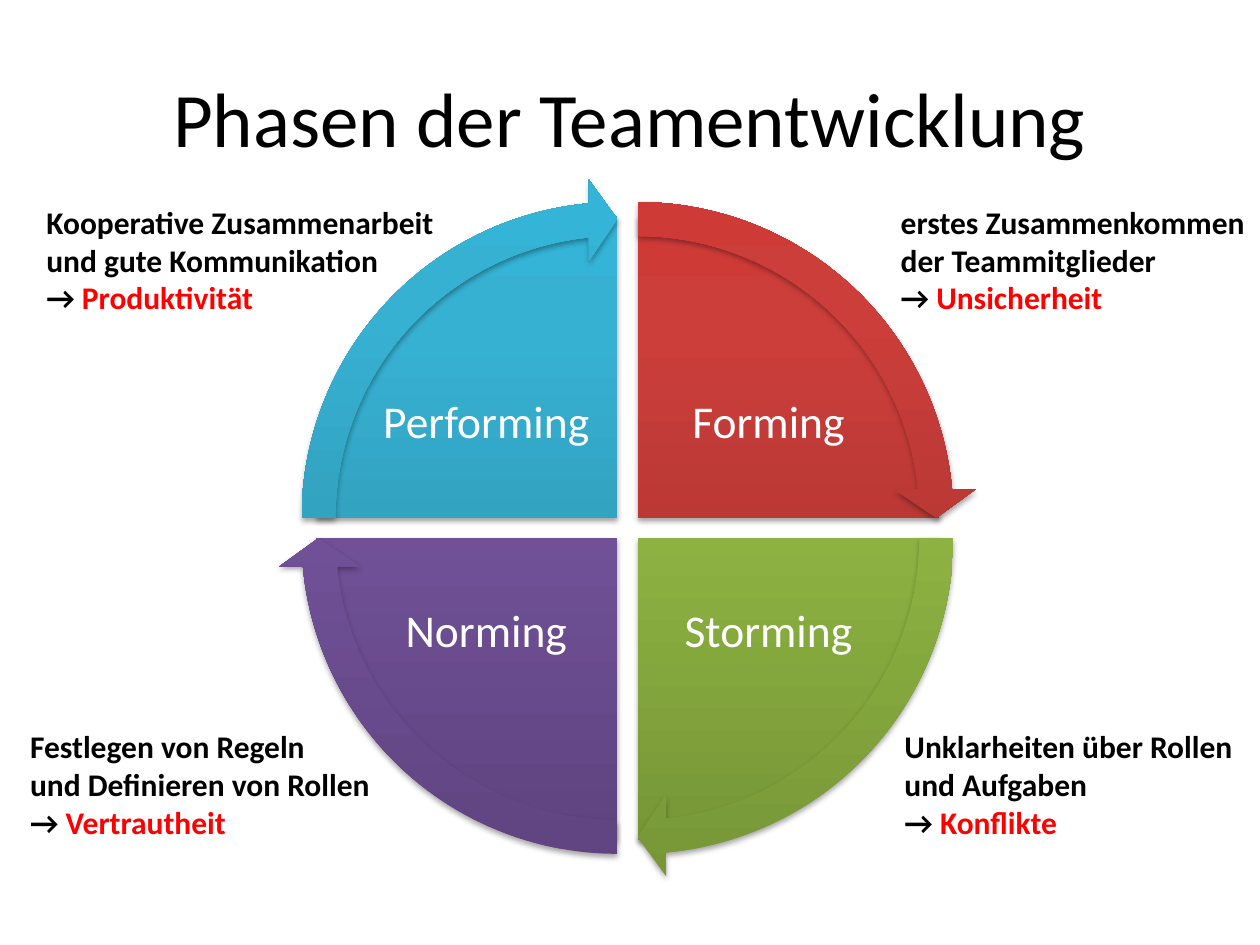
from copy import deepcopy
from dataclasses import dataclass

from lxml.etree import SubElement
from pptx import Presentation
from pptx.dml.color import RGBColor
from pptx.enum.shapes import MSO_SHAPE
from pptx.enum.text import MSO_ANCHOR, MSO_AUTO_SIZE, PP_ALIGN
from pptx.oxml.ns import qn
from pptx.util import Inches, Pt


@dataclass(frozen=True)
class Theme:
    font: str = "Calibri"
    black: str = "000000"
    white: str = "FFFFFF"
    accent: str = "FF0000"
    title_size: int = 44
    label_size: int = 26
    note_size: int = 18


@dataclass(frozen=True)
class Phase:
    name: str
    side: int  # -1 left, 1 right
    level: int  # -1 top, 1 bottom
    start: int  # start angle, 54 units to a quarter turn
    colors: tuple  # gradient from bottom to top
    note: str
    outcome: str
    note_box: tuple


THEME = Theme()
CENTER_X, CENTER_Y = 4.98, 4.19
GAP = 0.08
PIE_SIZE, ARROW_SIZE = 4.79, 5.39
QUARTER = 54
GRADIENT_STOPS = (0, 0.8, 1)

# Clockwise from the top right
PHASES = [
    Phase("Forming", 1, -1, 3 * QUARTER, ("9C2F2D", "CB3E3A", "CE3B37"),
          "erstes Zusammenkommen\vder Teammitglieder", "Unsicherheit",
          (7.05, 1.56, 2.95, 1.01)),
    Phase("Storming", 1, 1, 0, ("779737", "9BC348", "9DC746"),
          "Unklarheiten über Rollen\vund Aufgaben", "Konflikte",
          (7.08, 5.72, 2.82, 1.01)),
    Phase("Norming", -1, 1, QUARTER, ("5F4480", "7B58A6", "7C57A8"),
          "Festlegen von Regeln\vund Definieren von Rollen", "Vertrautheit",
          (0.14, 5.72, 2.92, 1.01)),
    Phase("Performing", -1, -1, 2 * QUARTER, ("2A88A2", "37B1D2", "34B4D6"),
          "Kooperative Zusammenarbeit\vund gute Kommunikation", "Produktivität",
          (0.27, 1.56, 3.3, 1.01)),
]


def set_font(para, size, color, bold=False):
    font = para.font
    font.name, font.size, font.bold = THEME.font, Pt(size), bold
    font.color.rgb = RGBColor.from_string(color)


def add_text_box(page, position, wrap=True):
    box = page.shapes.add_textbox(*map(Inches, position))
    box.text_frame.word_wrap = wrap
    return box.text_frame


def add_centered_text(page, position, text, size, color):
    frame = add_text_box(page, position)
    frame.vertical_anchor = MSO_ANCHOR.MIDDLE
    para = frame.paragraphs[0]
    para.text, para.alignment = text, PP_ALIGN.CENTER
    set_font(para, size, color)
    return frame


def add_label(page, phase):
    width, height = 1.77, 1.31
    left = CENTER_X + phase.side * 1.12 - width / 2
    top = CENTER_Y + phase.level * 0.83 - height / 2
    frame = add_centered_text(page, (left, top, width, height), phase.name,
                              THEME.label_size, THEME.white)
    frame.margin_left = frame.margin_right = Inches(0.04)
    frame.margin_top = frame.margin_bottom = Inches(0.04)
    frame.paragraphs[0].line_spacing = 0.9


def add_note(page, phase):
    frame = add_text_box(page, phase.note_box, wrap=False)
    frame.auto_size = MSO_AUTO_SIZE.SHAPE_TO_FIT_TEXT
    frame.paragraphs[0].text = phase.note
    result = frame.add_paragraph()
    result.add_run().text = "→ "
    span = result.add_run()
    span.text = phase.outcome
    span.font.color.rgb = RGBColor.from_string(THEME.accent)
    for para in frame.paragraphs:
        set_font(para, THEME.note_size, THEME.black, bold=True)


def add_gradient(shape, colors):
    shape.fill.gradient()
    shape.fill.gradient_angle = 90
    # A new gradient has two stops; add the third
    stop_list = shape.element.spPr.find(qn("a:gradFill")).find(qn("a:gsLst"))
    stop_list.append(deepcopy(stop_list[0]))
    for stop, position, color in zip(shape.fill.gradient_stops, GRADIENT_STOPS, colors):
        stop.position = position
        stop.color.rgb = RGBColor.from_string(color)


def add_shadow(shape):
    shape.shadow.inherit = False
    effects = shape.element.spPr.find(qn("a:effectLst"))
    shadow = SubElement(effects, qn("a:outerShdw"), blurRad=str(Pt(3.1)),
                        dist=str(Pt(1.8)), dir="5400000", rotWithShape="0")
    color = SubElement(shadow, qn("a:srgbClr"), val=THEME.black)
    SubElement(color, qn("a:alpha"), val="35000")


def add_wheel_part(page, phase, kind, size, adjustments):
    left = CENTER_X + phase.side * GAP - size / 2
    top = CENTER_Y + phase.level * GAP - size / 2
    shape = page.shapes.add_shape(kind, *map(Inches, (left, top, size, size)))
    for index, value in enumerate(adjustments):
        shape.adjustments[index] = value
    add_gradient(shape, phase.colors)
    shape.line.fill.background()
    add_shadow(shape)


def main():
    deck = Presentation()
    deck.slide_width, deck.slide_height = Inches(10), Inches(7.5)
    page = deck.slides.add_slide(deck.slide_layouts[6])

    # Title
    add_centered_text(page, (0.5, 0.3, 9, 1.25), "Phasen der Teamentwicklung",
                      THEME.title_size, THEME.black)

    # Quarters with their names
    for phase in PHASES:
        end = (phase.start + QUARTER) % (4 * QUARTER)
        add_wheel_part(page, phase, MSO_SHAPE.PIE, PIE_SIZE, (phase.start, end))
        add_label(page, phase)

    # Arrows around the wheel
    for phase in PHASES:
        add_wheel_part(page, phase, MSO_SHAPE.CIRCULAR_ARROW, ARROW_SIZE,
                       (0.05, 3.28, phase.start + 50.72, phase.start, 0.06))

    # Notes in the corners
    for phase in PHASES:
        add_note(page, phase)

    deck.save("out.pptx")


if __name__ == "__main__":
    main()
